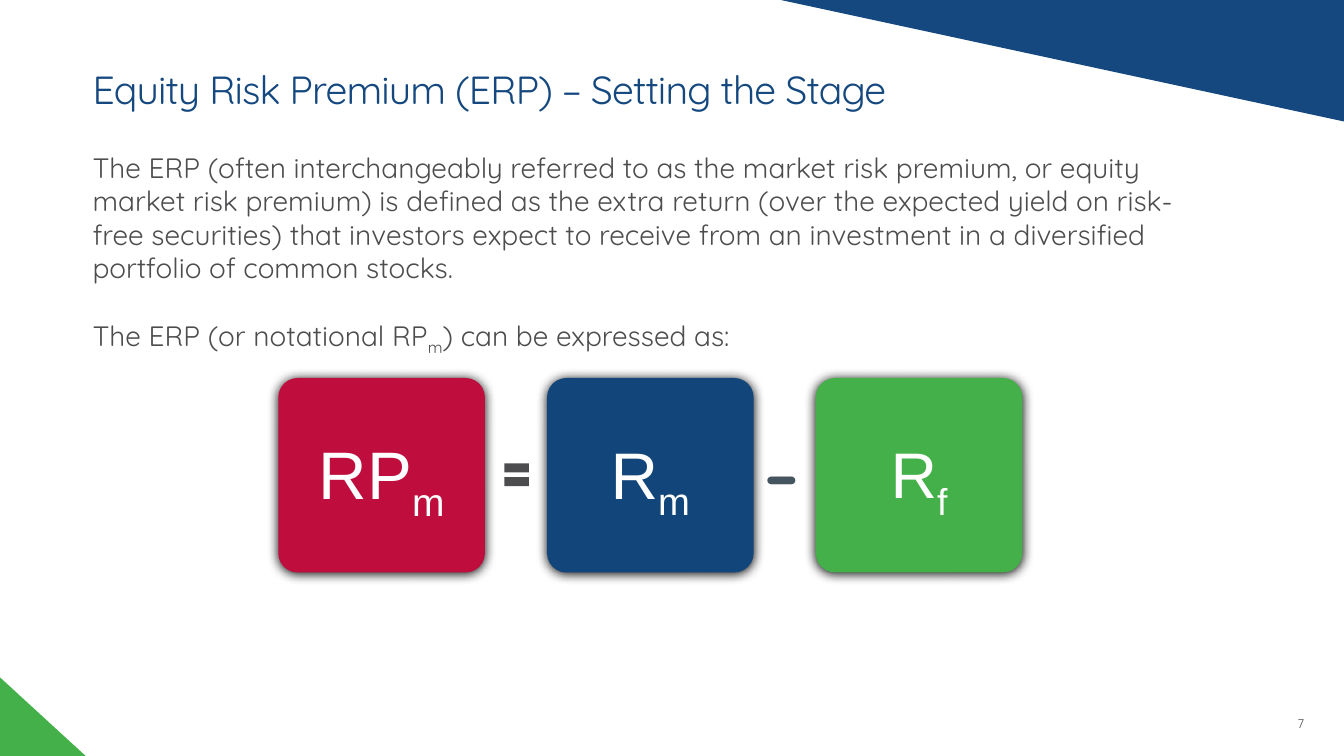
"""Build the equity risk premium slide with its three-tile equation."""
from dataclasses import dataclass

from lxml.etree import SubElement
from pptx import Presentation
from pptx.dml.color import RGBColor
from pptx.enum.shapes import MSO_SHAPE
from pptx.enum.text import MSO_ANCHOR, PP_ALIGN
from pptx.oxml.ns import qn
from pptx.shapes.autoshape import Shape
from pptx.slide import Slide
from pptx.text.text import TextFrame, _Paragraph
from pptx.util import Inches, Pt

NAVY = RGBColor(0x14, 0x48, 0x7F)
TILE_NAVY = RGBColor(0x12, 0x46, 0x7A)
CRIMSON = RGBColor(0xBF, 0x0D, 0x3E)
GREEN = RGBColor(0x43, 0xB0, 0x49)
GRAY = RGBColor(0x4D, 0x4D, 0x4F)
SLATE = RGBColor(0x45, 0x55, 0x60)
WHITE = RGBColor(0xFF, 0xFF, 0xFF)

TILE_LEFT, TILE_TOP, TILE_PITCH = 2.76, 3.75, 2.665
TILE_WIDTH, TILE_HEIGHT = 2.05, 1.93


@dataclass(frozen=True)
class Style:
    size: float
    color: RGBColor
    font: str = "Quicksand"
    bold: bool = False
    spacing: int = 0


@dataclass(frozen=True)
class Term:
    symbol: str
    subscript: str
    fill: RGBColor
    size: int


@dataclass(frozen=True)
class Corner:
    points: tuple[tuple[float, float], ...]
    fill: RGBColor


CORNERS = (
    Corner(((7.65, -0.02), (13.36, -0.02), (13.35, 1.21)), NAVY),
    Corner(((0, 6.72), (0.85, 7.5), (0, 7.5)), GREEN),
)
TERMS = (
    Term("RP", "m", CRIMSON, 48),
    Term("R", "m", TILE_NAVY, 47),
    Term("R", "f", GREEN, 46),
)
TITLE_STYLE = Style(28, NAVY, spacing=-60)
BODY_STYLE = Style(20, GRAY)
DEFINITION = (
    "The ERP (often interchangeably referred to as the market risk premium, or equity "
    "market risk premium) is defined as the extra return (over the expected yield on "
    "risk-free securities) that investors expect to receive from an investment in a "
    "diversified portfolio of common stocks."
)


def add_run(paragraph: _Paragraph, text: str, style: Style, baseline: int = 0) -> None:
    run = paragraph.add_run()
    run.text = text
    run.font.size = Pt(style.size)
    run.font.name = style.font
    run.font.bold = style.bold
    run.font.color.rgb = style.color
    properties = run._r.get_or_add_rPr()
    if style.spacing:
        properties.set("spc", str(style.spacing))
    if baseline:
        properties.set("baseline", str(baseline * 1000))


def set_margins(frame: TextFrame, margin: float) -> None:
    frame.margin_left = frame.margin_right = Inches(margin)
    frame.margin_top = frame.margin_bottom = Inches(margin)


def add_text_box(slide: Slide, left: float, top: float, width: float, height: float,
                 anchor: MSO_ANCHOR) -> TextFrame:
    box = slide.shapes.add_textbox(Inches(left), Inches(top), Inches(width), Inches(height))
    frame = box.text_frame
    frame.word_wrap = True
    frame.vertical_anchor = anchor
    return frame


def paint(shape: Shape, color: RGBColor) -> None:
    shape.fill.solid()
    shape.fill.fore_color.rgb = color
    shape.line.fill.background()
    shape.shadow.inherit = False


def add_corner(slide: Slide, corner: Corner) -> None:
    start, *others = [(Inches(x), Inches(y)) for x, y in corner.points]
    builder = slide.shapes.build_freeform(*start)
    builder.add_line_segments(others, close=True)
    paint(builder.convert_to_shape(), corner.fill)


def add_glow(shape: Shape) -> None:
    effects = shape._element.spPr.find(qn("a:effectLst"))
    shadow = SubElement(effects, qn("a:outerShdw"), blurRad=str(Pt(8.5)), dist=str(Pt(1)),
                        dir="5400000", algn="ctr", rotWithShape="0")
    SubElement(shadow, qn("a:srgbClr"), val="000000")


def add_tile(slide: Slide, term: Term, left: float) -> None:
    tile = slide.shapes.add_shape(MSO_SHAPE.ROUNDED_RECTANGLE, Inches(left), Inches(TILE_TOP),
                                  Inches(TILE_WIDTH), Inches(TILE_HEIGHT))
    tile.adjustments[0] = 0.1
    paint(tile, term.fill)
    add_glow(tile)
    frame = tile.text_frame
    frame.word_wrap = True
    frame.vertical_anchor = MSO_ANCHOR.MIDDLE
    set_margins(frame, 0.2)
    label = frame.paragraphs[0]
    label.alignment = PP_ALIGN.CENTER
    label.line_spacing = 0.9
    style = Style(term.size, WHITE, "Arial")
    add_run(label, term.symbol, style)
    add_run(label, term.subscript, style, -25)


def add_equation(slide: Slide) -> None:
    for index, term in enumerate(TERMS):
        add_tile(slide, term, TILE_LEFT + index * TILE_PITCH)
    equals = slide.shapes.add_shape(MSO_SHAPE.MATH_EQUAL, Inches(4.96), Inches(4.52),
                                    Inches(0.33), Inches(0.38))
    paint(equals, GRAY)
    minus = add_text_box(slide, 7.44, 4.28, 0.62, 0.86, MSO_ANCHOR.MIDDLE).paragraphs[0]
    minus.alignment = PP_ALIGN.CENTER
    add_run(minus, "–", Style(48, SLATE, bold=True))


def add_copy(slide: Slide) -> None:
    title = add_text_box(slide, 0.82, 0.65, 9.99, 0.41, MSO_ANCHOR.MIDDLE).paragraphs[0]
    title.line_spacing = 1.13
    add_run(title, "Equity Risk Premium (ERP) – Setting the Stage", TITLE_STYLE)

    body = add_text_box(slide, 0.82, 1.44, 11.04, 2.12, MSO_ANCHOR.TOP)
    add_run(body.paragraphs[0], DEFINITION, BODY_STYLE)
    notation = body.add_paragraph()
    notation.space_before = Pt(24)
    add_run(notation, "The ERP (or notational RP", BODY_STYLE)
    add_run(notation, "m", BODY_STYLE, -25)
    add_run(notation, ") can be expressed as:", BODY_STYLE)

    page_number = add_text_box(slide, 12.87, 7.06, 0.47, 0.19, MSO_ANCHOR.BOTTOM)
    set_margins(page_number, 0)
    add_run(page_number.paragraphs[0], "7", Style(9, GRAY))


def main() -> None:
    presentation = Presentation()
    presentation.slide_width = Inches(13.33)
    presentation.slide_height = Inches(7.5)
    slide = presentation.slides.add_slide(presentation.slide_layouts[6])
    for corner in CORNERS:
        add_corner(slide, corner)
    add_copy(slide)
    add_equation(slide)
    presentation.save("out.pptx")


if __name__ == "__main__":
    main()
